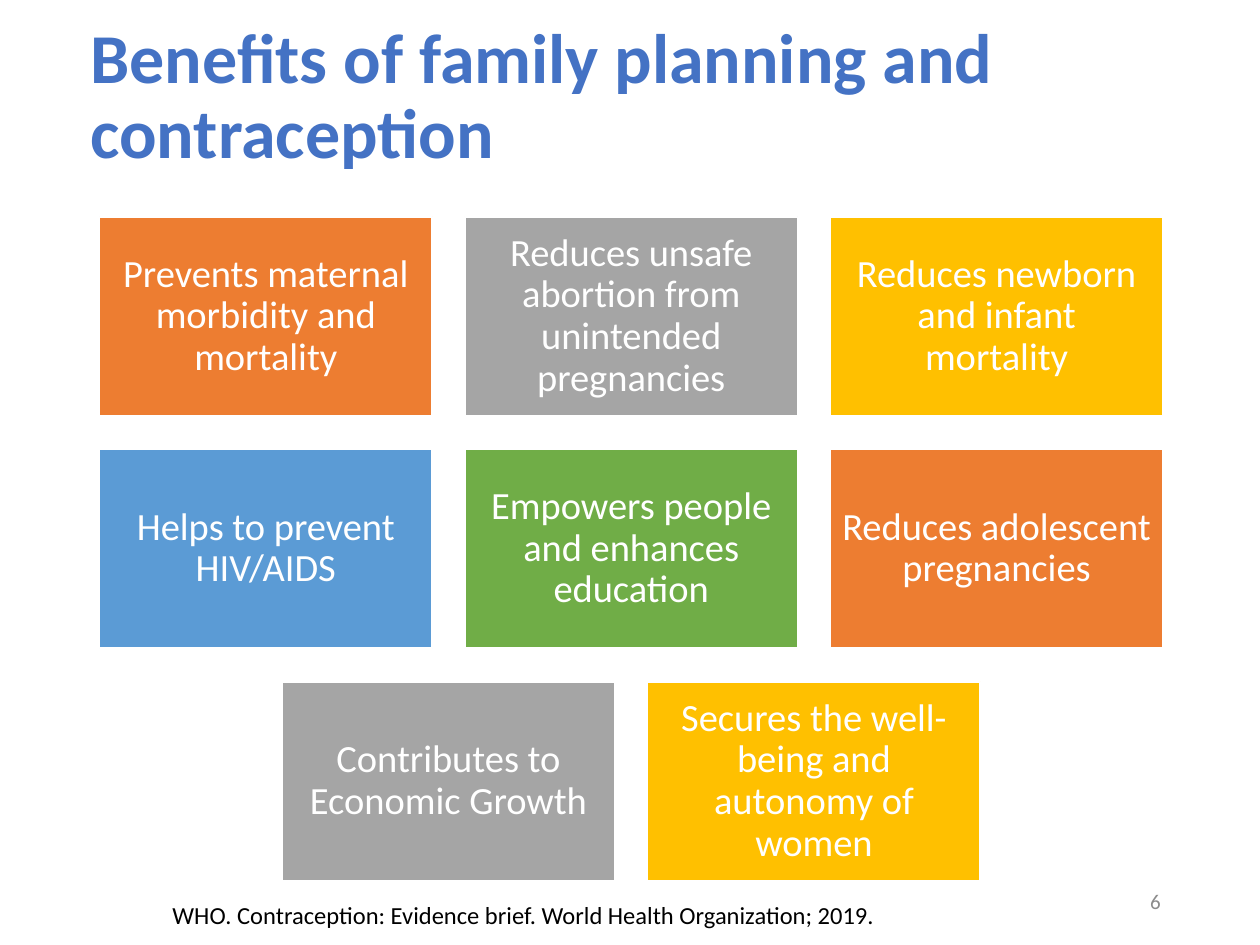
from dataclasses import dataclass

from pptx import Presentation
from pptx.dml.color import RGBColor
from pptx.enum.shapes import MSO_SHAPE
from pptx.enum.text import MSO_ANCHOR, PP_ALIGN
from pptx.slide import Slide
from pptx.text.text import TextFrame
from pptx.util import Inches, Pt

FONT = "Calibri"
TITLE_BLUE = RGBColor(0x44, 0x72, 0xC4)
ORANGE = RGBColor(0xED, 0x7D, 0x31)
GRAY = RGBColor(0xA5, 0xA5, 0xA5)
GOLD = RGBColor(0xFF, 0xC0, 0x00)
BLUE = RGBColor(0x5B, 0x9B, 0xD5)
GREEN = RGBColor(0x70, 0xAD, 0x47)
WHITE = RGBColor(0xFF, 0xFF, 0xFF)
BLACK = RGBColor(0x00, 0x00, 0x00)
NUMBER_GRAY = RGBColor(0x8C, 0x8C, 0x8C)

# Card grid, in inches
GRID_LEFT, GRID_TOP = 0.79, 1.72
CARD_WIDTH, CARD_HEIGHT = 2.64, 1.58
COLUMN_STEP, ROW_STEP = 2.9, 1.845
COLUMNS = 3


@dataclass(frozen=True)
class Label:
    text: str
    box: tuple[float, float, float, float]
    size: int
    color: RGBColor
    bold: bool = False
    align: PP_ALIGN = PP_ALIGN.LEFT
    anchor: MSO_ANCHOR = MSO_ANCHOR.MIDDLE
    line_spacing: float = 1.0


@dataclass(frozen=True)
class Card:
    text: str
    fill: RGBColor


LABELS = [
    Label("Benefits of family planning and contraception", (0.62, 0.3, 9.18, 0.96),
          40, TITLE_BLUE, bold=True, line_spacing=0.9),
    Label("6", (7.06, 6.95, 2.25, 0.4), 12, NUMBER_GRAY, align=PP_ALIGN.RIGHT),
    Label("WHO. Contraception: Evidence brief. World Health Organization; 2019.",
          (1.27, 7.09, 8.73, 0.34), 14, BLACK, anchor=MSO_ANCHOR.TOP),
]

CARD_ROWS = [
    [Card("Prevents maternal morbidity and mortality", ORANGE),
     Card("Reduces unsafe abortion from unintended pregnancies", GRAY),
     Card("Reduces newborn and infant mortality", GOLD)],
    [Card("Helps to prevent HIV/AIDS", BLUE),
     Card("Empowers people and enhances education", GREEN),
     Card("Reduces adolescent pregnancies", ORANGE)],
    [Card("Contributes to Economic Growth", GRAY),
     Card("Secures the well-being and autonomy of women", GOLD)],
]


def write_text(frame: TextFrame, text: str, size: int, color: RGBColor, bold: bool,
               align: PP_ALIGN, anchor: MSO_ANCHOR, line_spacing: float) -> None:
    frame.text = text
    frame.word_wrap = True
    frame.vertical_anchor = anchor
    paragraph = frame.paragraphs[0]
    paragraph.alignment = align
    paragraph.line_spacing = line_spacing
    font = paragraph.runs[0].font
    font.name, font.size, font.bold = FONT, Pt(size), bold
    font.color.rgb = color


def draw_label(slide: Slide, label: Label) -> None:
    text_box = slide.shapes.add_textbox(*map(Inches, label.box))
    write_text(text_box.text_frame, label.text, label.size, label.color, label.bold,
               label.align, label.anchor, label.line_spacing)


def draw_card(slide: Slide, card: Card, column: float, row: int) -> None:
    shape = slide.shapes.add_shape(
        MSO_SHAPE.RECTANGLE,
        Inches(GRID_LEFT + column * COLUMN_STEP), Inches(GRID_TOP + row * ROW_STEP),
        Inches(CARD_WIDTH), Inches(CARD_HEIGHT))
    shape.shadow.inherit = False
    shape.fill.solid()
    shape.fill.fore_color.rgb = card.fill
    shape.line.color.rgb = WHITE
    shape.line.width = Pt(1)
    frame = shape.text_frame
    frame.margin_left = frame.margin_right = Inches(0.09)
    frame.margin_top = frame.margin_bottom = Inches(0.09)
    write_text(frame, card.text, 22, WHITE, False, PP_ALIGN.CENTER,
               MSO_ANCHOR.MIDDLE, 0.9)


def main() -> None:
    presentation = Presentation()
    presentation.slide_width, presentation.slide_height = Inches(10), Inches(7.5)
    slide = presentation.slides.add_slide(presentation.slide_layouts[6])

    title, *footers = LABELS
    draw_label(slide, title)

    # Benefit cards: a shorter row is centred in the grid
    for row, cards in enumerate(CARD_ROWS):
        first_column = (COLUMNS - len(cards)) / 2
        for index, card in enumerate(cards):
            draw_card(slide, card, first_column + index, row)

    # Slide number and citation
    for footer in footers:
        draw_label(slide, footer)

    presentation.save("out.pptx")


if __name__ == "__main__":
    main()
